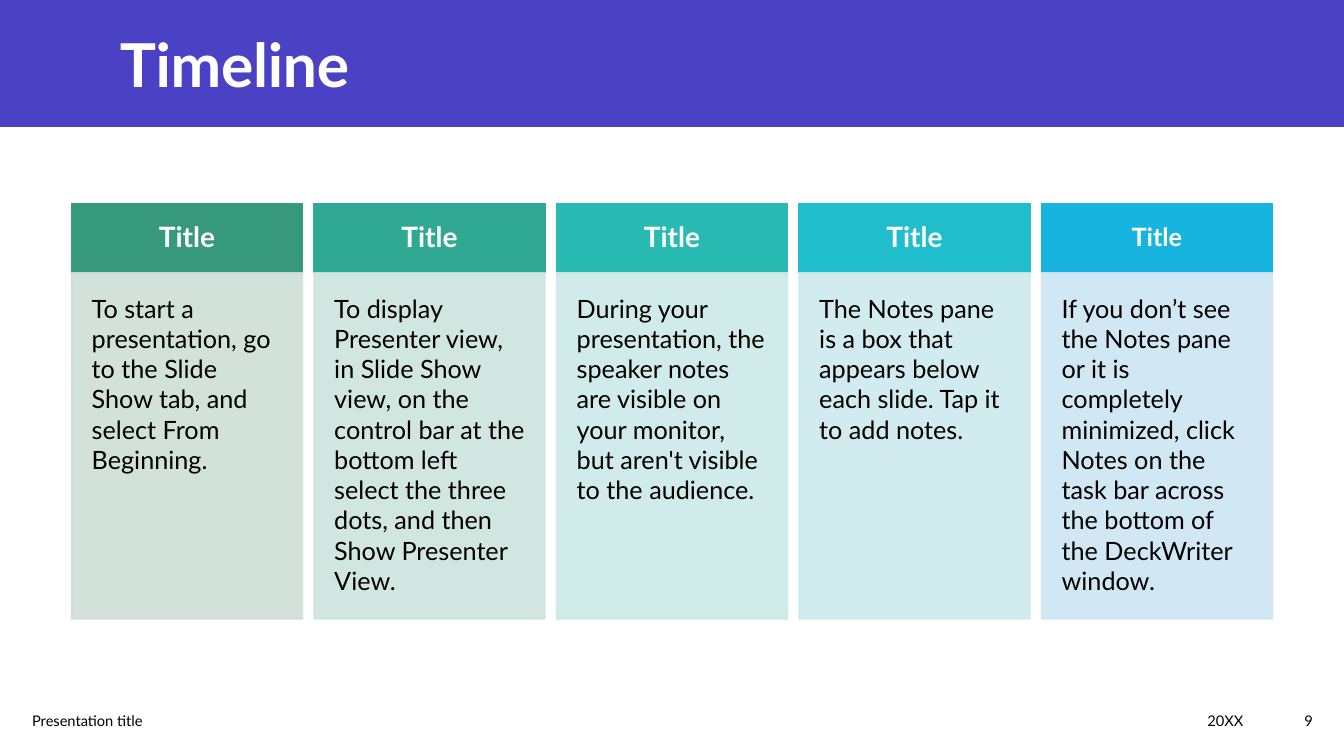
from lxml import etree
from pptx import Presentation
from pptx import util as u
from pptx.dml.color import RGBColor
from pptx.enum import shapes, text
from pptx.oxml.ns import qn

WIDTH, HEIGHT = 13.33, 7.5
FONT = "Lato"
WHITE, BLACK, INDIGO = "FFFFFF", "000000", "4A41C5"
LEFT, CENTER, RIGHT = text.PP_ALIGN.LEFT, text.PP_ALIGN.CENTER, text.PP_ALIGN.RIGHT
TOP, MIDDLE = text.MSO_ANCHOR.TOP, text.MSO_ANCHOR.MIDDLE

STEPS = [
    ("37997B", "CEDED7", 20,
     "To start a presentation, go to the Slide Show tab, and select From Beginning."),
    ("30A994", "CDE4DE", 20,
     "To display Presenter view, in Slide Show view, on the control bar at the bottom left "
     "select the three dots, and then Show Presenter View."),
    ("29BAB4", "CCE9E8", 20,
     "During your presentation, the speaker notes are visible on your monitor, "
     "but aren't visible to the audience."),
    ("20BECC", "CCE9EE", 20,
     "The Notes pane is a box that appears below each slide. Tap it to add notes."),
    ("17B4DF", "CCE5F3", 18,
     "If you don’t see the Notes pane or it is completely minimized, click Notes on the "
     "task bar across the bottom of the DeckWriter window."),
]


def color(hex_code):
    """Turn a hex string into a colour."""
    return RGBColor.from_string(hex_code)


def inches(box):
    """Convert a left, top, width, height box to lengths."""
    return [u.Inches(length) for length in box]


def panel(slide, box, fill, opacity=100):
    """Draw a rectangle whose outline matches its fill."""
    rect = slide.shapes.add_shape(shapes.MSO_SHAPE.RECTANGLE, *inches(box))
    rect.shadow.inherit = False
    rect.fill.solid()
    rect.fill.fore_color.rgb = color(fill)
    rect.line.color.rgb = color(fill)
    rect.line.width = u.Pt(1)
    if opacity < 100:
        for tint in rect.element.spPr.iter(qn("a:srgbClr")):
            etree.SubElement(tint, qn("a:alpha")).set("val", str(opacity * 1000))
    return rect


def write(shape, words, size, ink=BLACK, bold=False, align=LEFT, anchor=MIDDLE, inset=None):
    """Fill a shape with one formatted paragraph and return it."""
    frame = shape.text_frame
    frame.word_wrap = True
    frame.vertical_anchor = anchor
    if inset is not None:
        frame.margin_left = frame.margin_right = u.Inches(inset)
        frame.margin_top = frame.margin_bottom = u.Inches(inset)
    paragraph = frame.paragraphs[0]
    paragraph.text = words
    paragraph.alignment = align
    paragraph.font.name = FONT
    paragraph.font.size = u.Pt(size)
    paragraph.font.bold = bold
    paragraph.font.color.rgb = color(ink)
    return paragraph


def title_band(slide, box):
    """Place the title on a full-width band."""
    left, top, width, height = box
    band = panel(slide, box, INDIGO)
    band.line.fill.background()
    title_box = (left + 1.09, top + height / 6, width - 2.37, height * 0.66)
    title = slide.shapes.add_textbox(*inches(title_box))
    heading = write(title, "Timeline", 43.2, WHITE, bold=True)
    heading.runs[0].font._element.set("spc", "-20")


def step_column(slide, box, step):
    """Stack a step's header over its description."""
    left, top, width, height = box
    header_fill, body_fill, header_size, description = step
    header_height = height / 6
    header = panel(slide, (left, top, width, header_height), header_fill)
    label = write(header, "Title", header_size, WHITE, True, CENTER, inset=0.18)
    label.line_spacing = 0.9
    body_box = (left, top + header_height, width, height - header_height)
    body = panel(slide, body_box, body_fill, opacity=90)
    write(body, description, 18, anchor=TOP, inset=0.2)


def timeline(slide, box, gap=0.115):
    """Spread the steps over equal columns."""
    left, top, width, height = box
    column = (width - gap * (len(STEPS) - 1)) / len(STEPS)
    for index, step in enumerate(STEPS):
        step_column(slide, (left + index * (column + gap), top, column, height), step)


def footer(slide, box):
    """Place the presentation title, date and slide number in a row."""
    left, top, width, height = box
    number_width, date_width, name_width = 0.69, 4.76, 5.29
    number_left = left + width - number_width
    parts = [
        ("Presentation title", left, name_width, LEFT),
        ("20XX", number_left - date_width, date_width, RIGHT),
        ("9", number_left, number_width, RIGHT),
    ]
    for words, part_left, part_width, align in parts:
        part = slide.shapes.add_textbox(*inches((part_left, top, part_width, height)))
        write(part, words, 10.5, align=align)


def main():
    """Build and save the timeline slide."""
    deck = Presentation()
    deck.slide_width, deck.slide_height = u.Inches(WIDTH), u.Inches(HEIGHT)
    slide = deck.slides.add_slide(deck.slide_layouts[6])
    title_band(slide, (0, 0, WIDTH, 1.26))
    timeline(slide, (0.71, 2.02, WIDTH - 1.42, 4.12))
    footer(slide, (0.22, 6.95, WIDTH - 0.43, 0.4))
    deck.save("out.pptx")


if __name__ == "__main__":
    main()
